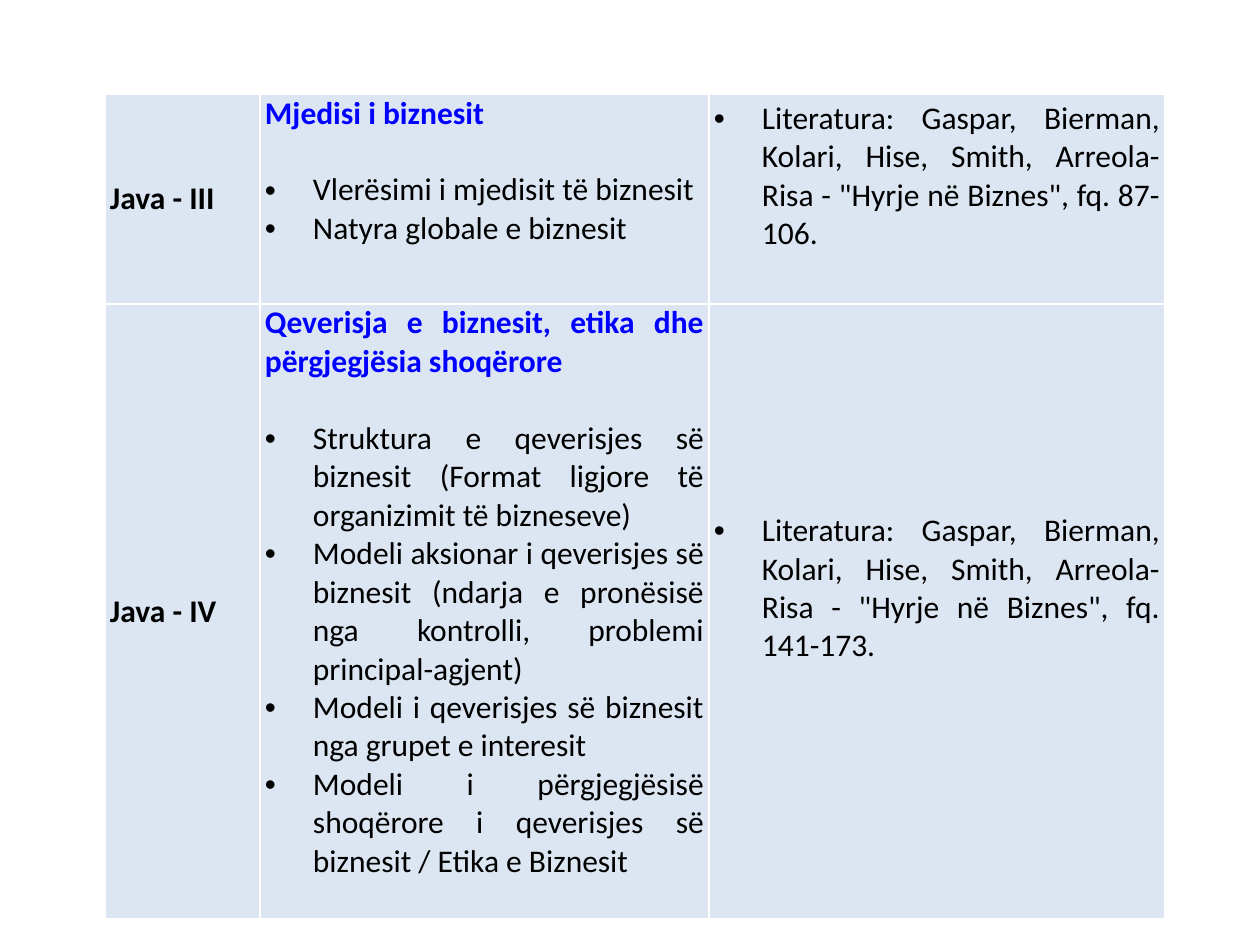
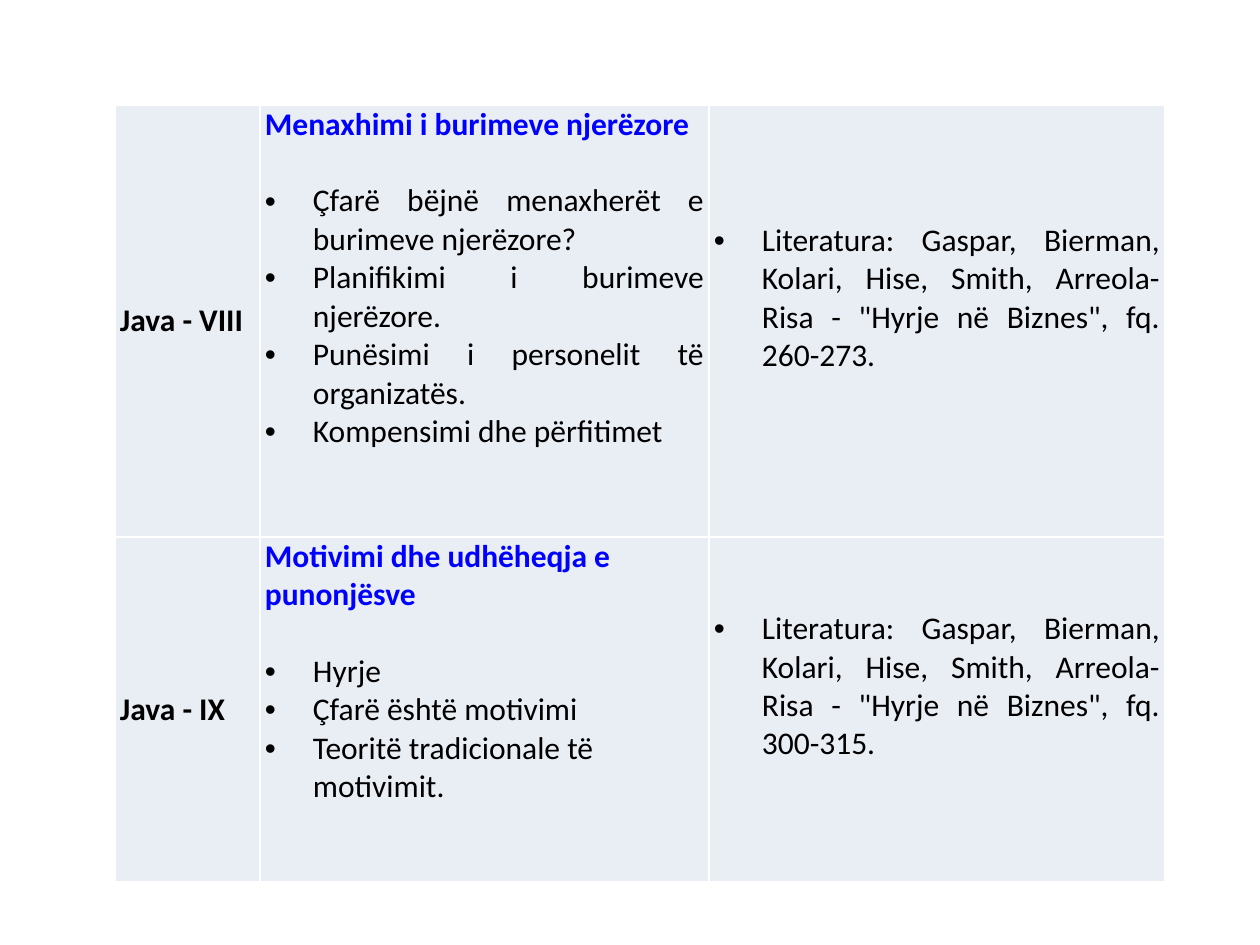
import pptx
import pptx.dml.color
import pptx.enum.text
import pptx.oxml
import pptx.oxml.ns
import pptx.util
import lxml.etree

PX = 914400 / 126
FONT = "Calibri"
SIZE = 18
LINE_GAP = 22
BLACK = "000000"
BLUE = "0000FF"
WHITE = "FFFFFF"
BULLET_INDENT = 48
SIDE_MARGIN = 5
READING_BOTTOM = 46
TOPIC_WIDTH = 449
READING_WIDTH = 456
RIGHT_EDGE = 1165
JUSTIFY = pptx.enum.text.PP_ALIGN.JUSTIFY
LEFT = pptx.enum.text.PP_ALIGN.LEFT
MIDDLE = pptx.enum.text.MSO_ANCHOR.MIDDLE
TOP = pptx.enum.text.MSO_ANCHOR.TOP


def emu(px):
    return pptx.util.Emu(round(px * PX))


def color(value):
    return pptx.dml.color.RGBColor.from_string(value)


def add_child(parent, tag, **attributes):
    return lxml.etree.SubElement(parent, pptx.oxml.ns.qn(tag), **attributes)


def add_borders(cell):
    properties = cell._tc.get_or_add_tcPr()
    for position, side in enumerate(("a:lnL", "a:lnR", "a:lnT", "a:lnB")):
        line = add_child(properties, side, w=str(pptx.util.Pt(1)))
        add_child(add_child(line, "a:solidFill"), "a:srgbClr", val=WHITE)
        properties.insert(position, line)


def style_cell(cell, fill, anchor, bottom=0):
    cell.fill.solid()
    cell.fill.fore_color.rgb = color(fill)
    cell.vertical_anchor = anchor
    cell.margin_left = cell.margin_right = emu(SIDE_MARGIN)
    cell.margin_top = 0
    cell.margin_bottom = emu(bottom)
    add_borders(cell)


def write(paragraph, text, ink=BLACK, bold=False, align=JUSTIFY):
    paragraph.text = text
    paragraph.alignment = align
    paragraph.font.name = FONT
    paragraph.font.size = pptx.util.Pt(SIZE)
    paragraph.font.bold = bold
    paragraph.font.color.rgb = color(ink)


def write_bullet(paragraph, text, align=JUSTIFY):
    write(paragraph, text, align=align)
    properties = paragraph._p.get_or_add_pPr()
    properties.set("marL", str(emu(BULLET_INDENT)))
    properties.set("indent", str(-emu(BULLET_INDENT)))
    bullet_font = pptx.oxml.parse_xml(
        f'<a:buFont {pptx.oxml.ns.nsdecls("a")} typeface="Arial"/>')
    bullet = pptx.oxml.parse_xml(
        f'<a:buChar {pptx.oxml.ns.nsdecls("a")} char="•"/>')
    properties.insert(0, bullet_font)
    properties.insert(1, bullet)


def fill_week(row, fill, week, heading, topics, pages, align):
    label, topic, reading = row.cells

    style_cell(label, fill, MIDDLE)
    write(label.text_frame.paragraphs[0], f"Java - {week}", bold=True)

    style_cell(topic, fill, TOP)
    title = topic.text_frame.paragraphs[0]
    write(title, heading, BLUE, True, align)
    title.space_after = pptx.util.Pt(LINE_GAP)
    for text in topics:
        write_bullet(topic.text_frame.add_paragraph(), text, align)

    style_cell(reading, fill, MIDDLE, READING_BOTTOM)
    write_bullet(
        reading.text_frame.paragraphs[0],
        "Literatura: Gaspar, Bierman, Kolari, Hise, Smith, Arreola-Risa - "
        f'"Hyrje në Biznes", fq. {pages}.')


def add_schedule(deck, top, label_width, fill, weeks):
    page = deck.slides.add_slide(deck.slide_layouts[6])
    widths = (label_width, TOPIC_WIDTH, READING_WIDTH)
    heights = [height for height, *content in weeks]
    frame = page.shapes.add_table(
        len(weeks), len(widths), emu(RIGHT_EDGE - sum(widths)), emu(top),
        emu(sum(widths)), emu(sum(heights)))
    table = frame.table
    table.first_row = False
    table.horz_banding = False
    for column, width in zip(table.columns, widths):
        column.width = emu(width)
    for row, (height, *content) in zip(table.rows, weeks):
        row.height = emu(height)
        fill_week(row, fill, *content)


def main():
    deck = pptx.Presentation()
    deck.slide_width = emu(1260)
    deck.slide_height = emu(945)
    add_schedule(deck, 94, 155, "DCE6F2", [
        (210, "III", "Mjedisi i biznesit", [
            "Vlerësimi i mjedisit të biznesit",
            "Natyra globale e biznesit",
        ], "87-106", JUSTIFY),
        (615, "IV", "Qeverisja e biznesit, etika dhe përgjegjësia shoqërore", [
            "Struktura e qeverisjes së biznesit (Format ligjore të organizimit të bizneseve)",
            "Modeli aksionar i qeverisjes së biznesit (ndarja e pronësisë nga kontrolli, "
            "problemi principal-agjent)",
            "Modeli i qeverisjes së biznesit nga grupet e interesit",
            "Modeli i përgjegjësisë shoqërore i qeverisjes së biznesit / Etika e Biznesit",
        ], "141-173", JUSTIFY),
    ])
    add_schedule(deck, 105, 145, "E9EDF4", [
        (432, "VIII", "Menaxhimi i burimeve njerëzore", [
            "Çfarë bëjnë menaxherët e burimeve njerëzore?",
            "Planifikimi i burimeve njerëzore.",
            "Punësimi i personelit të organizatës.",
            "Kompensimi dhe përfitimet",
        ], "260-273", JUSTIFY),
        (345, "IX", "Motivimi dhe udhëheqja e punonjësve", [
            "Hyrje",
            "Çfarë është motivimi",
            "Teoritë tradicionale të motivimit.",
        ], "300-315", LEFT),
    ])
    deck.save("out.pptx")


if __name__ == "__main__":
    main()
